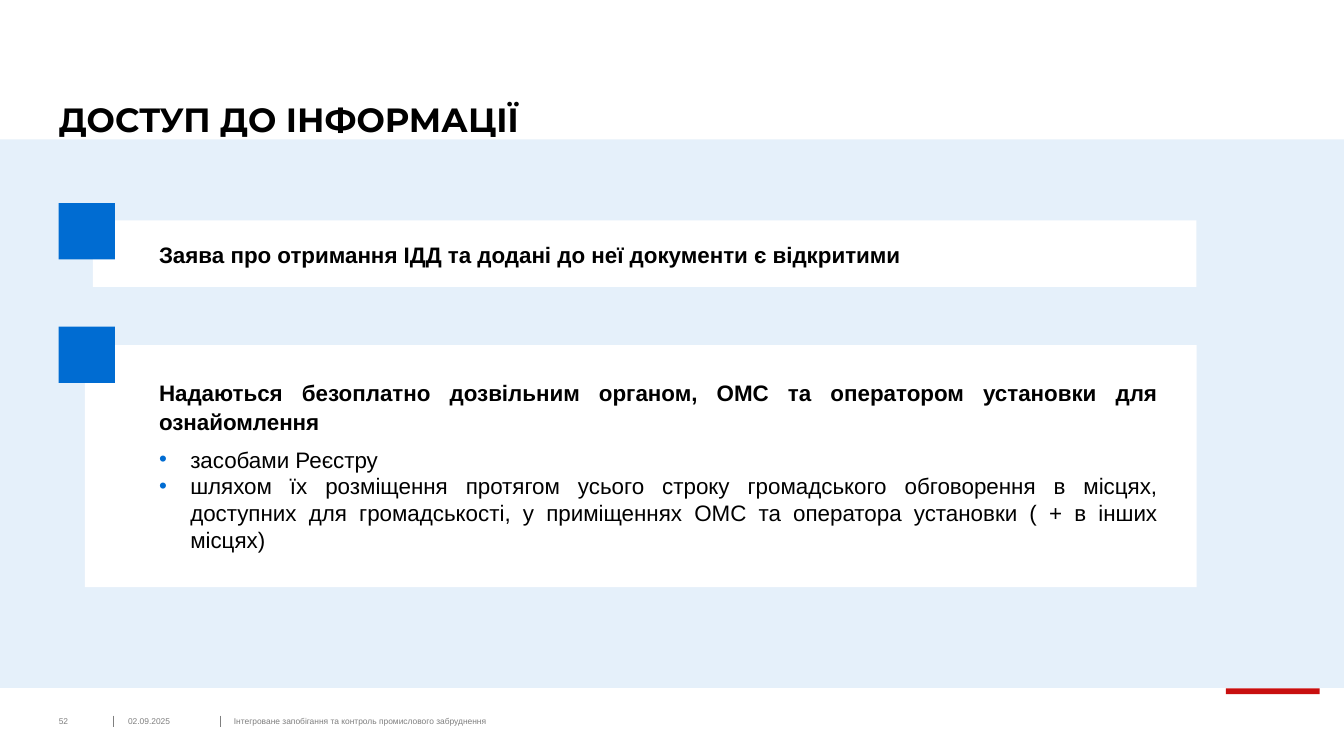
from lxml.etree import SubElement
from pptx import Presentation
from pptx.dml.color import RGBColor
from pptx.enum.shapes import MSO_CONNECTOR, MSO_SHAPE
from pptx.enum.text import MSO_ANCHOR, PP_ALIGN
from pptx.oxml.ns import qn
from pptx.util import Inches, Pt

COLS, ROWS = 160, 90
LEFT, FOOTER_TOP = 7, 85.2
SQUARE = 6.7
BLUE, PALE, RED = "006CD2", "E5F0FA", "C80F0F"
WHITE, BLACK, GRAY = "FFFFFF", "000000", "7F7F7F"

prs = Presentation()
prs.slide_width, prs.slide_height = Inches(13.33), Inches(7.5)


def color(value):
    """Turn a hex string into a colour."""
    return RGBColor.from_string(value)


def grid(x, y, w, h):
    """Turn columns and rows into slide lengths."""
    cw, rh = prs.slide_width / COLS, prs.slide_height / ROWS
    return int(x * cw), int(y * rh), int(w * cw), int(h * rh)


def add_rect(s, box, fill):
    """Draw a plain filled rectangle."""
    sp = s.shapes.add_shape(MSO_SHAPE.RECTANGLE, *grid(*box))
    sp.shadow.inherit = False
    sp.fill.solid()
    sp.fill.fore_color.rgb = color(fill)
    sp.line.fill.background()


def add_divider(s, x):
    """Draw a short vertical line between footer items."""
    left, top, _, height = grid(x, FOOTER_TOP, 0, 1.35)
    sp = s.shapes.add_connector(MSO_CONNECTOR.STRAIGHT, left, top, left, top + height)
    sp.line.color.rgb = color(GRAY)
    sp.line.width = Pt(0.75)
    SubElement(sp._element.spPr, qn("a:effectLst"))


def add_bullet(p):
    """Give a paragraph a hanging blue bullet."""
    pPr = p._p.get_or_add_pPr()
    pPr.set("marL", str(Inches(0.31)))
    pPr.set("indent", str(-Inches(0.31)))
    SubElement(SubElement(pPr, qn("a:buClr")), qn("a:srgbClr")).set("val", BLUE)
    SubElement(pPr, qn("a:buFont")).set("typeface", "Arial")
    SubElement(pPr, qn("a:buChar")).set("char", "•")


def write(p, text, size=16, font="Arial", fill=BLACK, bold=False,
          align=PP_ALIGN.LEFT, spacing=1.0, before=0, bullet=False):
    """Put formatted text into a paragraph."""
    if bullet:
        add_bullet(p)
    p.alignment, p.line_spacing, p.space_before = align, spacing, Pt(before)
    r = p.add_run()
    r.text = text
    r.font.size, r.font.name, r.font.bold = Pt(size), font, bold
    r.font.color.rgb = color(fill)


def set_frame(tf, anchor, side=0, end=0):
    """Set wrapping, anchor and margins of a text frame."""
    tf.word_wrap = True
    tf.vertical_anchor = anchor
    tf.margin_left = tf.margin_right = Inches(side)
    tf.margin_top = tf.margin_bottom = Inches(end)


def add_title(s, text):
    """Place and format the title."""
    sp = s.shapes.title
    sp.left, sp.top, sp.width, sp.height = grid(LEFT, 4.8, 96.4, 11.85)
    set_frame(sp.text_frame, MSO_ANCHOR.BOTTOM)
    write(sp.text_frame.paragraphs[0], text, size=24, font="Montserrat",
          bold=True, spacing=0.9)


def add_footer(s, x, w, text):
    """Add one small footer item."""
    tf = s.shapes.add_textbox(*grid(x, FOOTER_TOP, w, 1.2)).text_frame
    set_frame(tf, MSO_ANCHOR.MIDDLE)
    write(tf.paragraphs[0], text, size=6, fill=GRAY)


def add_card(s, panel, text_box, square_top, heading, bullets=()):
    """Add a white panel with a heading, bullets and a blue corner square."""
    add_rect(s, panel, WHITE)
    tf = s.shapes.add_textbox(*grid(*text_box)).text_frame
    set_frame(tf, MSO_ANCHOR.TOP, 0.1, 0.05)
    write(tf.paragraphs[0], heading, bold=True, align=PP_ALIGN.JUSTIFY, spacing=1.07)
    for i, text in enumerate(bullets):
        write(tf.add_paragraph(), text, align=PP_ALIGN.JUSTIFY,
              before=0 if i else 8, bullet=True)
    add_rect(s, (LEFT, square_top, SQUARE, SQUARE), BLUE)


def main():
    """Build the slide and save it."""
    s = prs.slides.add_slide(prs.slide_layouts[5])
    for x in (13.55, 26.2):
        add_divider(s, x)
    add_rect(s, (145.95, 81.95, 11.15, 0.7), RED)
    add_rect(s, (0, 16.6, COLS, 65.3), PALE)
    add_footer(s, 15.25, 9.5, "02.09.2025")
    add_footer(s, 27.85, 89.8, "Інтегроване запобігання та контроль промислового забруднення")
    add_footer(s, LEFT, 6.1, "52")
    add_title(s, "ДОСТУП ДО ІНФОРМАЦІЇ")
    add_card(s, (11.05, 26.25, 131.4, 7.9), (17.75, 27.85, 122.5, 4.45), 24.2,
             "Заява про отримання ІДД та додані до неї документи є відкритими")
    add_card(s, (10.1, 41.1, 132.35, 28.8), (17.75, 44.3, 121.3, 22.4), 38.9,
             "Надаються безоплатно дозвільним органом, ОМС та оператором установки для ознайомлення",
             ("засобами Реєстру",
              "шляхом їх розміщення протягом усього строку громадського обговорення в місцях, "
              "доступних для громадськості, у приміщеннях ОМС та оператора установки ( + в інших місцях)"))
    prs.save("out.pptx")


if __name__ == "__main__":
    main()
